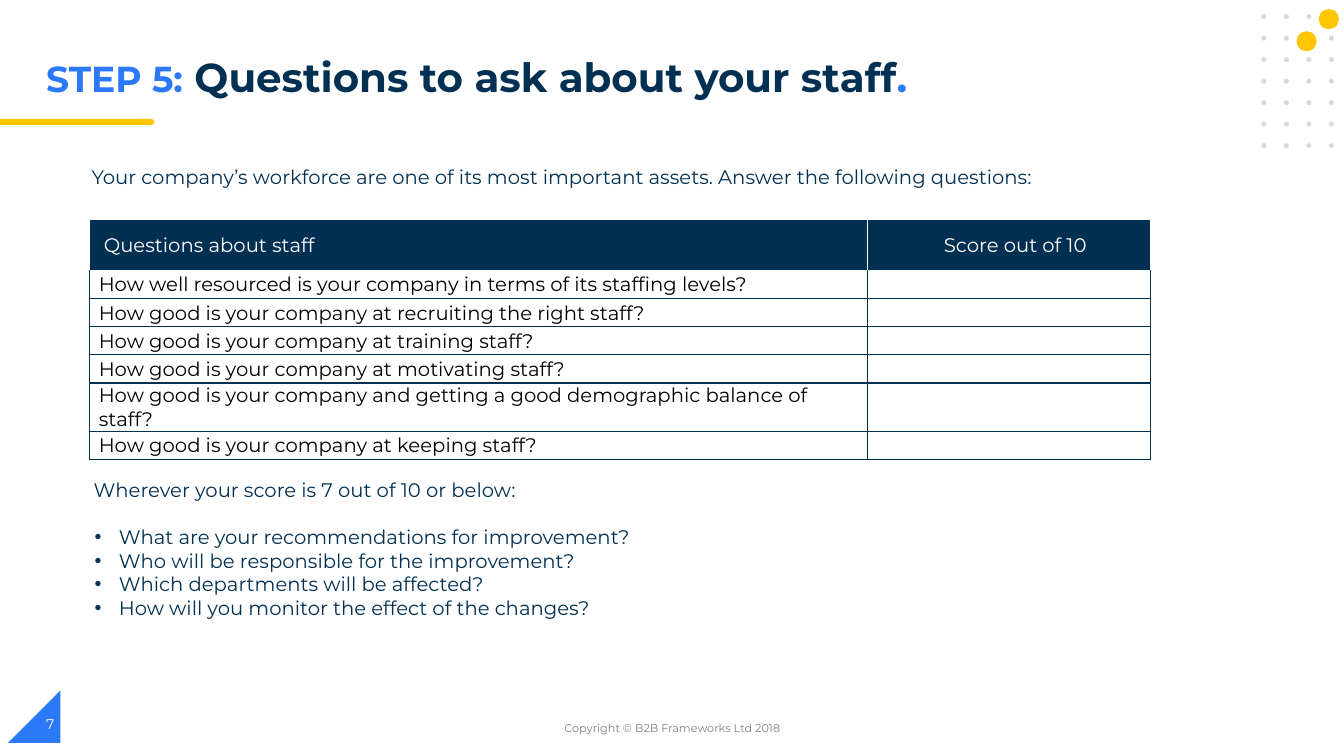
from dataclasses import dataclass
from itertools import product

from lxml.etree import SubElement
from pptx import Presentation
from pptx.dml.color import RGBColor
from pptx.enum.shapes import MSO_SHAPE
from pptx.enum.text import MSO_ANCHOR, PP_ALIGN
from pptx.oxml import parse_xml
from pptx.oxml.ns import nsdecls, qn
from pptx.util import Inches, Pt

COLORS = {
    "navy": "023053", "blue": "2B79F8", "yellow": "FFC600", "dot": "D1DBE0",
    "white": "FFFFFF", "black": "000000", "gray": "7F7F7F",
}
FONT = "Montserrat"


@dataclass
class Deco:
    kind: MSO_SHAPE
    left: float
    top: float
    width: float
    height: float
    color: str
    flip: bool = False


@dataclass
class Span:
    text: str
    size: float
    color: str
    bold: bool = False


@dataclass
class Label:
    left: float
    top: float
    width: float
    height: float
    spans: list[Span]
    align: PP_ALIGN = PP_ALIGN.LEFT
    anchor: MSO_ANCHOR = MSO_ANCHOR.TOP
    spacing: float = 1.0


DECOS = [
    Deco(MSO_SHAPE.RIGHT_TRIANGLE, 0.08, 6.85, 0.52, 0.52, "blue", True),
    Deco(MSO_SHAPE.FLOWCHART_TERMINATOR, 1.34, 1.18, 0.19, 0.06, "yellow"),
    Deco(MSO_SHAPE.RECTANGLE, 0, 1.18, 1.41, 0.06, "yellow"),
    *[Deco(MSO_SHAPE.OVAL, 12.51 + 0.67 * col / 3, 0.14 + 1.28 * row / 6, 0.05, 0.05, "dot")
      for row, col in product(range(7), range(4))],
    Deco(MSO_SHAPE.OVAL, 13.08, 0.09, 0.2, 0.2, "yellow"),
    Deco(MSO_SHAPE.OVAL, 12.86, 0.31, 0.2, 0.2, "yellow"),
]
LABELS = [
    Label(0.36, 0.52, 9.11, 0.6, [
        Span("STEP 5:", 25.8, "blue", True),
        Span(" Questions to ask about your staff", 28.8, "navy", True),
        Span(".", 28.8, "blue", True),
    ], spacing=0.9),
    Label(0.81, 1.59, 11.24, 0.34, [Span(
        "Your company’s workforce are one of its most important assets. "
        "Answer the following questions:", 14, "navy")]),
    Label(4.42, 7.02, 4.5, 0.4, [Span("Copyright © B2B Frameworks Ltd 2018", 8, "gray")],
          PP_ALIGN.CENTER, MSO_ANCHOR.MIDDLE),
    Label(0.36, 6.98, 3, 0.4, [Span("7", 10, "white")], anchor=MSO_ANCHOR.MIDDLE),
]
HEADERS = ["Questions about staff", "Score out of 10"]
QUESTIONS = [
    "How well resourced is your company in terms of its staffing levels?",
    "How good is your company at recruiting the right staff?",
    "How good is your company at training staff?",
    "How good is your company at motivating staff?",
    "How good is your company and getting a good demographic balance of staff?",
    "How good is your company at keeping staff?",
]
FOLLOW_UP = "Wherever your score is 7 out of 10 or below:"
ACTIONS = [
    "What are your recommendations for improvement?",
    "Who will be responsible for the improvement?",
    "Which departments will be affected?",
    "How will you monitor the effect of the changes?",
]


def rgb(name: str) -> RGBColor:
    return RGBColor.from_string(COLORS[name])


def style_run(r, size: float, color: str, bold: bool = False) -> None:
    r.font.name = FONT
    r.font.size = Pt(size)
    r.font.bold = bold
    r.font.color.rgb = rgb(color)


def add_deco(s, deco: Deco) -> None:
    sp = s.shapes.add_shape(deco.kind, Inches(deco.left), Inches(deco.top),
                            Inches(deco.width), Inches(deco.height))
    sp.shadow.inherit = False
    sp.fill.solid()
    sp.fill.fore_color.rgb = rgb(deco.color)
    sp.line.fill.background()
    if deco.flip:
        sp._element.spPr.find(qn("a:xfrm")).set("flipH", "1")


def add_frame(s, left: float, top: float, width: float, height: float):
    tf = s.shapes.add_textbox(Inches(left), Inches(top), Inches(width), Inches(height)).text_frame
    tf.word_wrap = True
    return tf


def add_label(s, label: Label) -> None:
    tf = add_frame(s, label.left, label.top, label.width, label.height)
    tf.vertical_anchor = label.anchor
    p = tf.paragraphs[0]
    p.alignment = label.align
    p.line_spacing = label.spacing
    for span in label.spans:
        r = p.add_run()
        r.text = span.text
        style_run(r, span.size, span.color, span.bold)


def set_borders(cell, color: str, top: str) -> None:
    tcPr = cell._tc.get_or_add_tcPr()
    for i, side in enumerate("LRTB"):
        line = COLORS[top if side == "T" else color]
        tcPr.insert(i, parse_xml(
            f'<a:ln{side} {nsdecls("a")} w="12700"><a:solidFill>'
            f'<a:srgbClr val="{line}"/></a:solidFill></a:ln{side}>'))


def fill_cell(cell, text: str, row: int, col: int) -> None:
    header = row == 0
    cell.margin_left = cell.margin_right = cell.margin_top = Inches(0.01)
    cell.margin_bottom = 0
    cell.vertical_anchor = MSO_ANCHOR.MIDDLE
    if header:
        cell.fill.solid()
        cell.fill.fore_color.rgb = rgb("navy")
    else:
        cell.fill.background()
    set_borders(cell, "white" if header else "navy", "white" if row < 2 else "navy")
    p = cell.text_frame.paragraphs[0]
    p.text = text
    p.alignment = PP_ALIGN.CENTER if header and col else PP_ALIGN.LEFT
    p._p.get_or_add_pPr().set("marL", str(Inches(0.13 if header else 0.08)))
    for r in p.runs:
        style_run(r, 14, "white" if header else "black")
    if not text:
        end = SubElement(p._p, qn("a:endParaRPr"), sz="1400")
        SubElement(end, qn("a:latin"), typeface=FONT)


def add_questions(s) -> None:
    rows = [HEADERS] + [[question, ""] for question in QUESTIONS]
    table = s.shapes.add_table(len(rows), 2, Inches(0.89), Inches(2.18),
                               Inches(10.52), Inches(2.18)).table
    table.first_row = table.horz_banding = False
    for col, width in enumerate((7.71, 2.81)):
        table.columns[col].width = Inches(width)
    for row, texts in enumerate(rows):
        table.rows[row].height = Inches(0.28 if row else 0.5)
        for col, text in enumerate(texts):
            fill_cell(table.cell(row, col), text, row, col)


def add_actions(s) -> None:
    tf = add_frame(s, 0.83, 4.69, 9.55, 1.52)
    tf.text = FOLLOW_UP
    for i, action in enumerate(ACTIONS):
        p = tf.add_paragraph()
        p.text = action
        if i == 0:
            p.space_before = Pt(17)
        pPr = p._p.get_or_add_pPr()
        pPr.set("marL", str(Inches(0.25)))
        pPr.set("indent", str(Inches(-0.24)))
        SubElement(SubElement(pPr, qn("a:buClr")), qn("a:srgbClr"), val=COLORS["navy"])
        SubElement(pPr, qn("a:buFont"), typeface="Arial")
        SubElement(pPr, qn("a:buChar"), char="•")
    for p in tf.paragraphs:
        style_run(p.runs[0], 14, "navy")


def main() -> None:
    prs = Presentation()
    prs.slide_width, prs.slide_height = Inches(13.33), Inches(7.5)
    s = prs.slides.add_slide(prs.slide_layouts[6])
    for deco in DECOS:
        add_deco(s, deco)
    for label in LABELS:
        add_label(s, label)
    add_questions(s)
    add_actions(s)
    prs.save("out.pptx")


if __name__ == "__main__":
    main()
